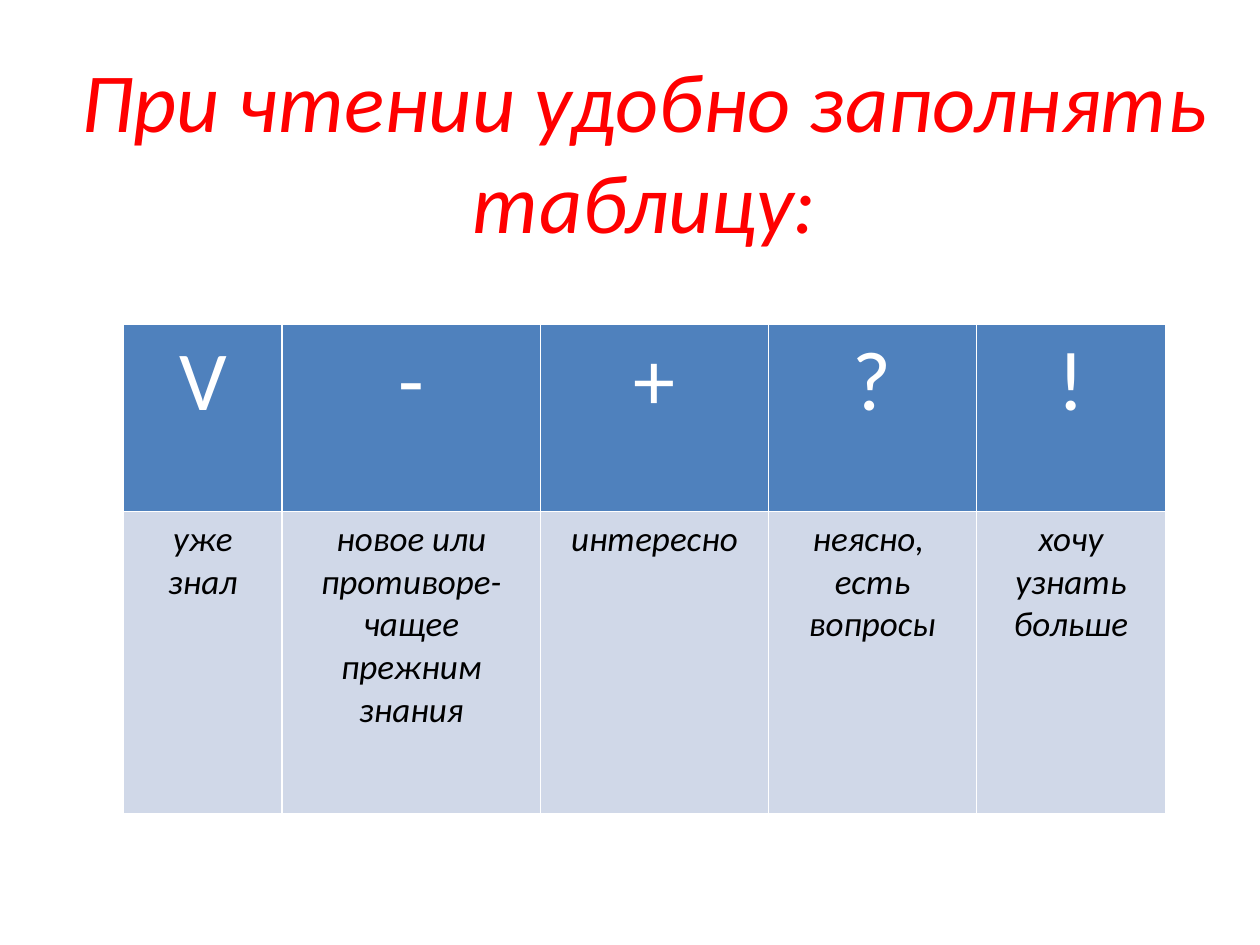
"""Build a slide with a table of marks to use while reading."""
from pptx import Presentation
from pptx.dml.color import RGBColor
from pptx.enum.text import MSO_ANCHOR, PP_ALIGN
from pptx.util import Inches, Pt

CENTER = PP_ALIGN.CENTER
MIDDLE = MSO_ANCHOR.MIDDLE
RED = RGBColor(0xFF, 0x00, 0x00)
WHITE = RGBColor(0xFF, 0xFF, 0xFF)
BLACK = RGBColor(0x00, 0x00, 0x00)
BLUE = RGBColor(0x4F, 0x81, 0xBD)
PALE_BLUE = RGBColor(0xD0, 0xD8, 0xE8)
FONT = "Calibri"

COLUMN_WIDTHS = [1.26, 2.05, 1.81, 1.65, 1.5]
ROW_HEIGHTS = [1.49, 2.4]
MARKS = ["V", "-", "+", "?", "!"]
MEANINGS = [
    "уже знал",
    "новое или противоре-чащее прежним знания",
    "интересно",
    "неясно, \nесть вопросы",
    "хочу узнать больше",
]
ROWS = [
    (MARKS, 48, WHITE, False, BLUE),
    (MEANINGS, 20, BLACK, True, PALE_BLUE),
]


def write_text(text_frame, text, size, color, italic):
    text_frame.text = text
    for paragraph in text_frame.paragraphs:
        paragraph.alignment = CENTER
        for run in paragraph.runs:
            run.font.name = FONT
            run.font.size = Pt(size)
            run.font.bold = False
            run.font.italic = italic
            run.font.color.rgb = color


presentation = Presentation()
presentation.slide_width = Inches(10)
presentation.slide_height = Inches(7.5)
slide = presentation.slides.add_slide(presentation.slide_layouts[6])

title = slide.shapes.add_textbox(Inches(0.51), Inches(0.36), Inches(9.21), Inches(1.65))
title.text_frame.word_wrap = True
title.text_frame.vertical_anchor = MIDDLE
write_text(title.text_frame, "При чтении удобно заполнять таблицу:", 48, RED, True)

table = slide.shapes.add_table(
    len(ROWS), len(COLUMN_WIDTHS), Inches(0.98), Inches(2.57),
    Inches(sum(COLUMN_WIDTHS)), Inches(sum(ROW_HEIGHTS)),
).table
for column, width in zip(table.columns, COLUMN_WIDTHS):
    column.width = Inches(width)
for row, height, (texts, size, color, italic, fill) in zip(table.rows, ROW_HEIGHTS, ROWS):
    row.height = Inches(height)
    for cell, text in zip(row.cells, texts):
        cell.fill.solid()
        cell.fill.fore_color.rgb = fill
        write_text(cell.text_frame, text, size, color, italic)

presentation.save("out.pptx")
